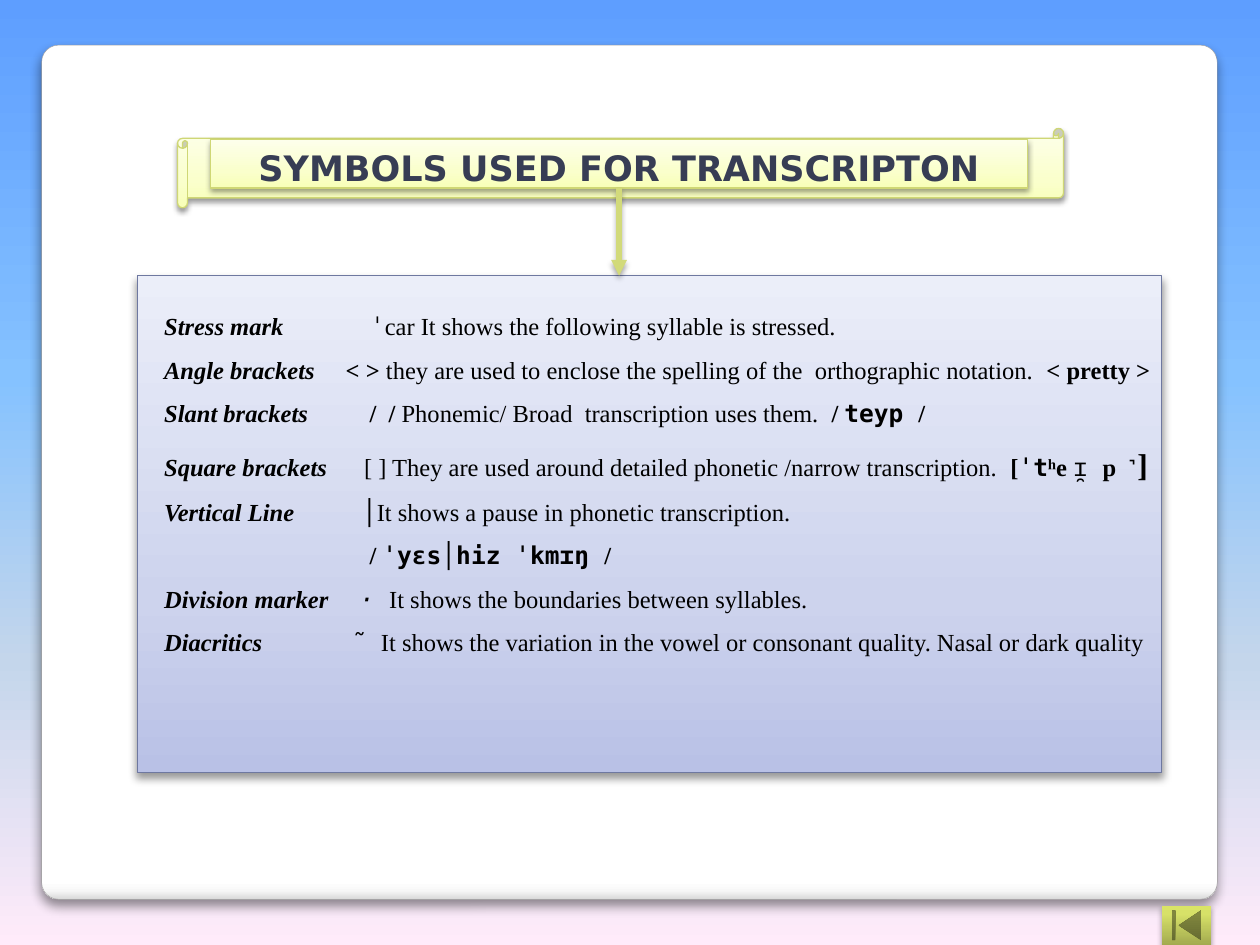
import pptx
import pptx.dml.color
import pptx.enum.shapes
import pptx.enum.text
import pptx.oxml.ns
import pptx.util
from dataclasses import dataclass
from lxml import etree

Cm, Pt = pptx.util.Cm, pptx.util.Pt
qn = pptx.oxml.ns.qn
Shape = pptx.enum.shapes.MSO_SHAPE
Align = pptx.enum.text.PP_ALIGN


@dataclass(frozen=True)
class Theme:
    background: tuple = ((0, "5E9EFF"), (40, "85C2FF"), (70, "C4D6EB"), (100, "FFEBFA"))
    page: tuple = ((0, "FFFFFF"), (98, "FFFFFF"), (99, "F7F7F7"), (100, "D9D9D9"))
    body: tuple = ((0, "B9C1E6"), (35, "CDD3ED"), (100, "EBEEF9"))
    banner: tuple = ((0, "F8FFB8"), (35, "FAFFCC"), (100, "FDFFEB"))
    button: tuple = ((0, "A3AB4F"), (80, "D7E168"), (100, "DAE466"))
    page_line: str = "A2A1A1"
    body_line: str = "6E78A0"
    banner_line: str = "CFD775"
    arrow: str = "D2DA7A"
    title_text: str = "373D54"
    text: str = "000000"
    title_font: str = "DejaVu Sans"
    text_font: str = "Times New Roman"
    symbol_font: str = "DejaVu Sans Mono"
    title_size: int = 20
    text_size: int = 14
    inset: float = 0.13


def rgb(value):
    return pptx.dml.color.RGBColor.from_string(value)


class SlideBuilder:
    def __init__(self, presentation, theme):
        self.theme = theme
        self.slide = presentation.slides.add_slide(presentation.slide_layouts[6])

    def gradient(self, fill, element, stops, angle):
        fill.gradient()
        gradient = next(element.iter(qn("a:gradFill")))
        stop_list = gradient.find(qn("a:gsLst"))
        for stop in list(stop_list):
            stop_list.remove(stop)
        for position, color in stops:
            stop = etree.SubElement(stop_list, qn("a:gs"), pos=str(position * 1000))
            etree.SubElement(stop, qn("a:srgbClr"), val=color)
        gradient.find(qn("a:lin")).set("ang", str(angle * 60000))

    def background(self, stops):
        self.gradient(self.slide.background.fill, self.slide.element, stops, 90)

    def shadow(self, effects, opacity, blur, distance):
        outer = etree.SubElement(
            effects, qn("a:outerShdw"), blurRad=str(Pt(blur)),
            dist=str(Pt(distance)), dir="5400000", rotWithShape="0")
        color = etree.SubElement(outer, qn("a:srgbClr"), val="000000")
        etree.SubElement(color, qn("a:alpha"), val=str(opacity * 1000))

    def shape(self, kind, box, stops, shadow, line=None, width=0.75, angle=270):
        shape = self.slide.shapes.add_shape(kind, *map(Cm, box))
        self.gradient(shape.fill, shape.element, stops, angle)
        if line:
            shape.line.color.rgb = rgb(line)
            shape.line.width = Pt(width)
        else:
            shape.line.fill.background()
        shape.shadow.inherit = False
        self.shadow(next(shape.element.iter(qn("a:effectLst"))), *shadow)
        return shape

    def frame(self, shape):
        frame = shape.text_frame
        frame.word_wrap = True
        frame.vertical_anchor = pptx.enum.text.MSO_ANCHOR.TOP
        frame.margin_left = frame.margin_right = Cm(self.theme.inset)
        frame.margin_top = frame.margin_bottom = Cm(self.theme.inset)
        return frame

    def font(self, paragraph, name, size, color):
        paragraph.font.name = name
        paragraph.font.size = Pt(size)
        paragraph.font.color.rgb = rgb(color)

    def title(self, shape, text):
        theme = self.theme
        paragraph = self.frame(shape).paragraphs[0]
        paragraph.alignment = Align.CENTER
        run = paragraph.add_run()
        run.text = text
        self.font(paragraph, theme.title_font, theme.title_size, theme.title_text)
        paragraph.font.bold = True
        # Shape text defaults to white, so the run states its colour too
        run.font.color.rgb = rgb(theme.title_text)

    def entries(self, box, rows):
        theme = self.theme
        frame = self.frame(self.slide.shapes.add_textbox(*map(Cm, box)))
        for index, (space, stops, runs) in enumerate(rows):
            paragraph = frame.add_paragraph() if index else frame.paragraphs[0]
            paragraph.alignment = Align.JUSTIFY
            if index:
                paragraph.space_before = Pt(space)
            properties = paragraph._p.get_or_add_pPr()
            tabs = etree.SubElement(properties, qn("a:tabLst"))
            for stop in stops:
                etree.SubElement(tabs, qn("a:tab"), pos=str(Cm(stop)), algn="l")
            self.font(paragraph, theme.text_font, theme.text_size, theme.text)
            for text, style, *size in runs:
                run = paragraph.add_run()
                run.text = text
                if "b" in style:
                    run.font.bold = True
                if "i" in style:
                    run.font.italic = True
                if "m" in style:
                    run.font.name = theme.symbol_font
                if size:
                    run.font.size = Pt(size[0])

    def arrow(self, source, site, end, color, width, shadow):
        connector = self.slide.shapes.add_connector(
            pptx.enum.shapes.MSO_CONNECTOR.STRAIGHT, 0, 0, *map(Cm, end))
        connector.begin_connect(source, site)
        connector.line.color.rgb = rgb(color)
        connector.line.width = Pt(width)
        line = next(connector.element.iter(qn("a:ln")))
        etree.SubElement(line, qn("a:tailEnd"), type="triangle")
        properties = connector.element.find(qn("p:spPr"))
        self.shadow(etree.SubElement(properties, qn("a:effectLst")), *shadow)


# Space before, tab stops in cm, runs: b bold, i italic, m symbol font, optional size
ROWS = [
    (0, [4.15], [("Stress mark\t", "bi"), ("ˈ", "m"),
                 ("car It shows the following syllable is stressed.", "")]),
    (8, [3.66], [("Angle brackets\t", "bi"), ("< > ", "b"),
                 ("they are used to enclose the spelling of the  orthographic notation.  ", ""),
                 ("< pretty >", "b")]),
    (8, [4.14], [("Slant brackets\t", "bi"), ("/  /", "b"),
                 (" Phonemic/ Broad  transcription uses them.  ", ""),
                 ("/ ", "b"), ("teyp ", "bm"), ("/", "b")]),
    (10, [4.03], [("Square brackets\t", "bi"),
                  ("[ ] They are used around detailed phonetic /narrow transcription.  ", ""),
                  ("[", "b"), ("ˈt", "bm"), ("ʰe ", "b"), ("ɪ̯ ", "m"), ("p", "b"),
                  (" ̚", "bm", 10), ("]", "b", 18)]),
    (8, [3.99], [("Vertical Line\t", "bi"), ("│", "m"),
                 ("It shows a pause in phonetic transcription.", "")]),
    (8, [4.14], [("\t/ ", "b"), ("ˈyɛs│hiz ˈkmɪŋ ", "bm"), ("/", "b")]),
    (8, [3.94], [("Division marker\t", "bi"), ("· ", "im"),
                 ("It shows the boundaries between syllables.", "")]),
    (8, [3.76, 4.37], [("Diacritics\t", "bi"), ("˜\t", "im"),
                       ("It shows the variation in the vowel or consonant quality. "
                        "Nasal or dark quality", "")]),
]


def main():
    presentation = pptx.Presentation()
    presentation.slide_width, presentation.slide_height = Cm(25.4), Cm(19.05)
    theme = Theme()
    builder = SlideBuilder(presentation, theme)

    # Background and rounded page
    builder.background(theme.background)
    page = builder.shape(Shape.ROUNDED_RECTANGLE, (0.84, 0.91, 23.7, 17.22), theme.page,
                         (44, 6, 4), theme.page_line, 0.25, 90)
    page.adjustments[0] = 0.02

    # Panel behind the symbol list
    builder.shape(Shape.RECTANGLE, (2.77, 5.56, 20.65, 10.01), theme.body,
                  (40, 5, 3), theme.body_line)

    # Title banner
    banner_shadow = (38, 3, 1.6)
    builder.shape(Shape.HORIZONTAL_SCROLL, (3.58, 2.59, 17.86, 1.6), theme.banner,
                  banner_shadow, theme.banner_line)
    title = builder.shape(Shape.RECTANGLE, (4.24, 2.82, 16.48, 0.97), theme.banner,
                          banner_shadow, theme.banner_line)
    builder.title(title, "SYMBOLS USED FOR TRANSCRIPTON")

    # Symbol list
    builder.entries((3.18, 6.15, 20.24, 7.29), ROWS)

    # Arrow from title to panel, and navigation button
    builder.arrow(title, 2, (12.48, 5.56), theme.arrow, 3, (35, 3, 1.8))
    builder.shape(Shape.ACTION_BUTTON_BEGINNING, (23.42, 18.26, 0.99, 0.79),
                  theme.button, (35, 3, 1.8))

    presentation.save("out.pptx")


if __name__ == "__main__":
    main()
